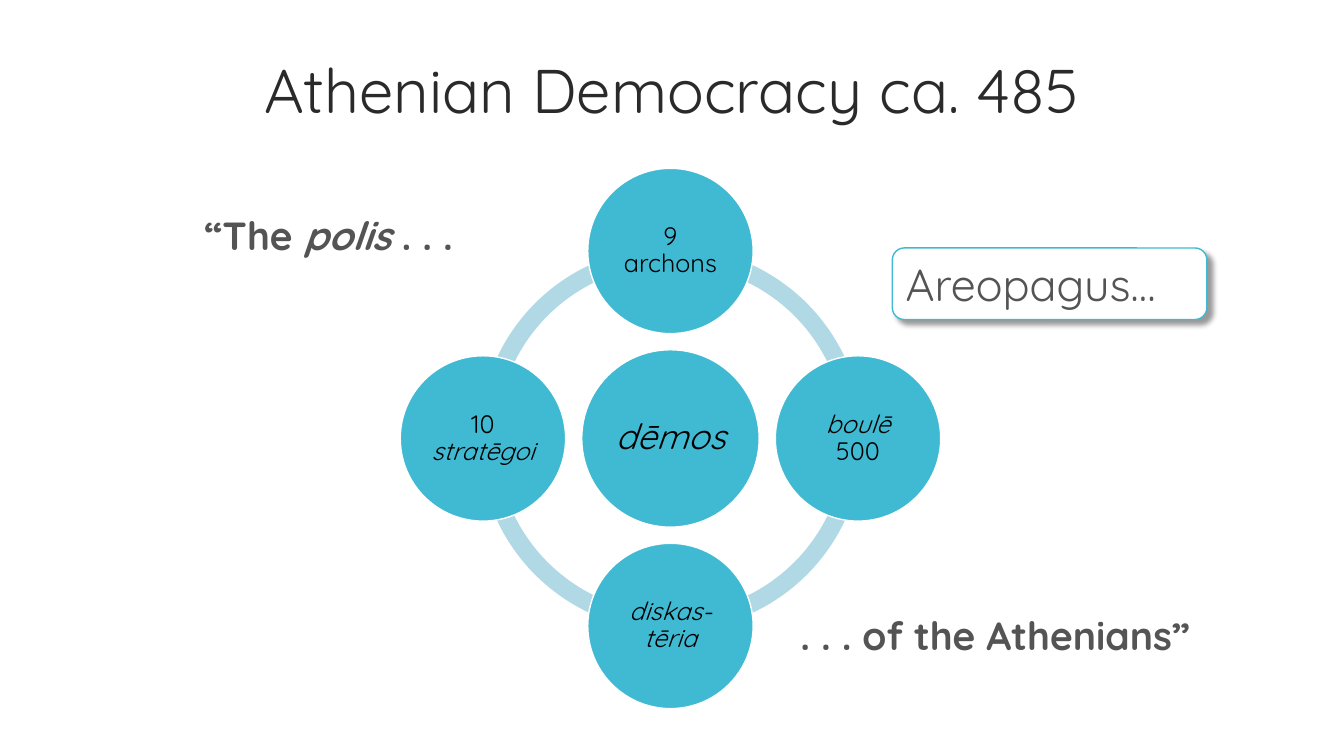
from dataclasses import dataclass

from lxml.etree import SubElement
from pptx import Presentation
from pptx.dml.color import RGBColor
from pptx.enum.shapes import MSO_SHAPE
from pptx.enum.text import MSO_ANCHOR, MSO_AUTO_SIZE, PP_ALIGN
from pptx.oxml.ns import qn
from pptx.shapes.autoshape import Shape
from pptx.slide import Slide
from pptx.text.text import TextFrame
from pptx.util import Emu, Pt

PX = 9144  # EMU per px, 100 px to the inch


@dataclass(frozen=True)
class Theme:
    font: str = "Quicksand"
    title: str = "2A2A2A"
    body: str = "545454"
    label: str = "000000"
    disc: str = "40BAD2"
    ring: str = "B0D9E5"
    white: str = "FFFFFF"
    title_size: int = 44
    note_size: int = 32
    quote_size: int = 28
    hub_size: int = 25
    node_size: int = 18


@dataclass(frozen=True)
class Word:
    text: str
    italic: bool = False


@dataclass(frozen=True)
class Box:
    left: int
    top: int
    width: int
    height: int

    def emu(self) -> tuple[Emu, ...]:
        return tuple(Emu(n * PX) for n in (self.left, self.top, self.width, self.height))


@dataclass(frozen=True)
class Disc:
    dx: int
    dy: int
    size: int
    points: int
    words: tuple[Word, ...]


@dataclass(frozen=True)
class Quote:
    box: Box
    align: PP_ALIGN
    words: tuple[Word, ...]


THEME = Theme()
MID_X, MID_Y = 665, 435
REACH, NODE, HUB, RING = 186, 164, 176, 381

DISCS = (
    Disc(0, 0, HUB, THEME.hub_size, (Word("dēmos", True),)),
    Disc(0, -REACH, NODE, THEME.node_size, (Word("9 archons"),)),
    Disc(REACH, 0, NODE, THEME.node_size, (Word("boulē", True), Word(" 500"))),
    Disc(0, REACH, NODE, THEME.node_size, (Word("diskas-tēria", True),)),
    Disc(-REACH, 0, NODE, THEME.node_size, (Word("10 "), Word("stratēgoi", True))),
)
QUOTES = (
    Quote(Box(190, 204, 269, 57), PP_ALIGN.RIGHT,
          (Word("“The "), Word("polis", True), Word(" . . ."))),
    Quote(Box(784, 601, 413, 57), PP_ALIGN.LEFT, (Word(". . . of the Athenians”"),)),
)


def around(x: int, y: int, size: int) -> Box:
    """Give the square of this size centred on a point."""
    return Box(x - size // 2, y - size // 2, size, size)


def write(frame: TextFrame, words: tuple[Word, ...], points: int, color: str,
          align: PP_ALIGN, bold: bool = False) -> None:
    line = frame.paragraphs[0]
    line.alignment = align
    for word in words:
        run = line.add_run()
        run.text = word.text
        font = run.font
        font.name, font.size = THEME.font, Pt(points)
        font.bold, font.italic = bold, word.italic
        font.color.rgb = RGBColor.from_string(color)


def grow(frame: TextFrame, anchor: MSO_ANCHOR) -> None:
    """Let the frame fit its single unwrapped line."""
    frame.word_wrap = False
    frame.auto_size = MSO_AUTO_SIZE.SHAPE_TO_FIT_TEXT
    frame.vertical_anchor = anchor


def add_form(slide: Slide, kind: MSO_SHAPE, box: Box, fill: str,
             line: str | None = None) -> Shape:
    form = slide.shapes.add_shape(kind, *box.emu())
    form.shadow.inherit = False
    form.fill.solid()
    form.fill.fore_color.rgb = RGBColor.from_string(fill)
    if line:
        form.line.color.rgb = RGBColor.from_string(line)
        form.line.width = Pt(1)
    else:
        form.line.fill.background()
    return form


def add_title(slide: Slide) -> None:
    title = slide.shapes.title
    title.left, title.top, title.width, title.height = Box(204, 49, 925, 87).emu()
    frame = title.text_frame
    grow(frame, MSO_ANCHOR.MIDDLE)
    frame.margin_left = frame.margin_right = Emu(20 * PX)
    frame.margin_top = frame.margin_bottom = Emu(10 * PX)
    write(frame, (Word("Athenian Democracy ca. 485"),), THEME.title_size,
          THEME.title, PP_ALIGN.CENTER)
    frame.paragraphs[0].line_spacing = 0.9


def add_ring(slide: Slide) -> None:
    """Draw four quarter arcs; 54 adjustment units make 90 degrees."""
    for start, end in ((108, 162), (54, 108), (0, 54), (162, 0)):
        arc = add_form(slide, MSO_SHAPE.BLOCK_ARC, around(MID_X, MID_Y, RING), THEME.ring)
        for i, value in enumerate((start, end, 0.046)):
            arc.adjustments[i] = value


def add_disc(slide: Slide, disc: Disc) -> None:
    box = around(MID_X + disc.dx, MID_Y + disc.dy, disc.size)
    frame = add_form(slide, MSO_SHAPE.OVAL, box, THEME.disc, THEME.white).text_frame
    frame.word_wrap = True
    frame.vertical_anchor = MSO_ANCHOR.MIDDLE
    frame.margin_left = frame.margin_right = Emu(3 * PX)
    frame.margin_top = frame.margin_bottom = Emu(3 * PX)
    write(frame, disc.words, disc.points, THEME.label, PP_ALIGN.CENTER)
    frame.paragraphs[0].line_spacing = 0.9


def add_quote(slide: Slide, quote: Quote) -> None:
    frame = slide.shapes.add_textbox(*quote.box.emu()).text_frame
    grow(frame, MSO_ANCHOR.MIDDLE)
    write(frame, quote.words, THEME.quote_size, THEME.body, quote.align, bold=True)


def add_shade(form: Shape) -> None:
    effects = form.element.spPr.find(qn("a:effectLst"))
    shade = SubElement(effects, qn("a:outerShdw"), blurRad=str(Pt(4)), dist=str(Pt(5)),
                       dir="2700000", algn="tl", rotWithShape="0")
    color = SubElement(shade, qn("a:srgbClr"), val=THEME.label)
    SubElement(color, qn("a:alpha"), val="40000")


def add_note(slide: Slide) -> None:
    note = add_form(slide, MSO_SHAPE.ROUNDED_RECTANGLE, Box(885, 246, 312, 71),
                    THEME.white, THEME.disc)
    add_shade(note)
    grow(note.text_frame, MSO_ANCHOR.TOP)
    write(note.text_frame, (Word("Areopagus…"),), THEME.note_size, THEME.body,
          PP_ALIGN.LEFT)


def main() -> None:
    deck = Presentation()
    deck.slide_width, deck.slide_height = Emu(1333 * PX), Emu(750 * PX)
    slide = deck.slides.add_slide(deck.slide_layouts[5])
    add_title(slide)
    add_ring(slide)
    for disc in DISCS:
        add_disc(slide, disc)
    for quote in QUOTES:
        add_quote(slide, quote)
    add_note(slide)
    deck.save("out.pptx")


if __name__ == "__main__":
    main()
